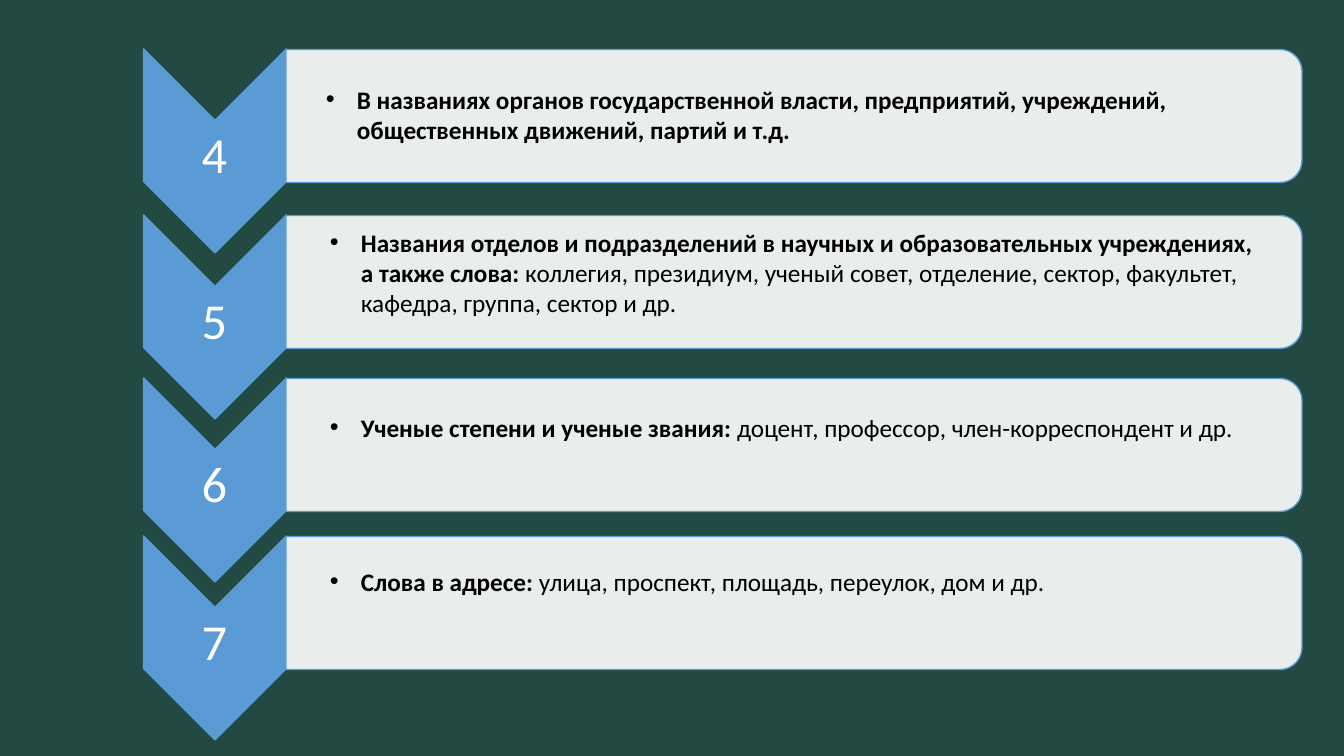
from lxml import etree
from pptx import Presentation
from pptx.dml.color import RGBColor
from pptx.enum.shapes import MSO_SHAPE
from pptx.enum.text import MSO_ANCHOR, MSO_AUTO_SIZE, PP_ALIGN
from pptx.oxml.ns import qn
from pptx.util import Emu, Pt

PX = 914400 / 100.8
BLUE, WHITE, BLACK, GREEN = "5B9BD5", "FFFFFF", "000000", "224A42"
CHEVRON_X, CHEVRON_LENGTH, CHEVRON_WIDTH = 215, 204, 143
PANEL_X, PANEL_LENGTH, PANEL_HEIGHT = 794, 1016, 133
INDENT = 31

# number, row top, text box (left, top, width, height), bold text, plain text
RULES = [
    ("4", 49, (316, 79, 950, 72),
     "В названиях органов государственной власти, предприятий, учреждений, "
     "общественных движений, партий и т.д.", ""),
    ("5", 215, (320, 222, 952, 102),
     "Названия отделов и подразделений в научных и образовательных учреждениях, "
     "а также слова:",
     " коллегия, президиум, ученый совет, отделение, сектор, факультет, "
     "кафедра, группа, сектор и др."),
    ("6", 378, (320, 407, 952, 40),
     "Ученые степени и ученые звания: ",
     "доцент, профессор, член-корреспондент и др."),
    ("7", 536, (320, 561, 901, 40),
     "Слова в адресе: ",
     "улица, проспект, площадь, переулок, дом и др."),
]


def px(*lengths):
    return [Emu(round(length * PX)) for length in lengths]


def add_turned(preset, center_x, center_y, width, height, color):
    """Add a blue-edged shape turned a quarter clockwise about its centre."""
    shape = slide.shapes.add_shape(
        preset, *px(center_x - width / 2, center_y - height / 2, width, height))
    shape.rotation = 90
    shape.shadow.inherit = False
    shape.fill.solid()
    shape.fill.fore_color.rgb = RGBColor.from_string(color)
    shape.line.color.rgb = RGBColor.from_string(BLUE)
    shape.line.width = Pt(1)
    return shape


prs = Presentation()
prs.slide_width, prs.slide_height = px(1344, 756)
slide = prs.slides.add_slide(prs.slide_layouts[6])
slide.background.fill.solid()
slide.background.fill.fore_color.rgb = RGBColor.from_string(GREEN)

for number, top, text_area, bold_text, plain_text in RULES:
    add_turned(MSO_SHAPE.CHEVRON, CHEVRON_X, top + 102,
               CHEVRON_LENGTH, CHEVRON_WIDTH, BLUE)

    panel = add_turned(MSO_SHAPE.ROUND_2_SAME_RECTANGLE, PANEL_X, top + 67,
                       PANEL_HEIGHT, PANEL_LENGTH, WHITE)
    panel_color = panel.fill._xPr.find(qn("a:solidFill"))[0]
    etree.SubElement(panel_color, qn("a:alpha"), val="90000")

    number_frame = slide.shapes.add_textbox(*px(143, top + 78, 143, 61)).text_frame
    number_frame.word_wrap = True
    number_frame.vertical_anchor = MSO_ANCHOR.MIDDLE
    number_frame.margin_left, number_frame.margin_right = px(3, 3)
    number_frame.margin_top, number_frame.margin_bottom = px(3, 3)
    number_line = number_frame.paragraphs[0]
    number_line.text = number
    number_line.alignment = PP_ALIGN.CENTER
    number_line.line_spacing = 0.9
    number_line.font.name = "Calibri"
    number_line.font.size = Pt(36)
    number_line.font.color.rgb = RGBColor.from_string(WHITE)

    rule_frame = slide.shapes.add_textbox(*px(*text_area)).text_frame
    rule_frame.word_wrap = True
    rule_frame.auto_size = MSO_AUTO_SIZE.SHAPE_TO_FIT_TEXT
    rule = rule_frame.paragraphs[0]
    properties = rule._p.get_or_add_pPr()
    indent = px(INDENT)[0]
    properties.set("marL", str(indent))
    properties.set("indent", str(-indent))
    etree.SubElement(properties, qn("a:buFont"), typeface="Arial")
    etree.SubElement(properties, qn("a:buChar"), char="•")
    for text, bold in ((bold_text, True), (plain_text, False)):
        if text:
            run = rule.add_run()
            run.text = text
            run.font.name = "Calibri"
            run.font.size = Pt(18)
            run.font.bold = bold
            run.font.color.rgb = RGBColor.from_string(BLACK)

prs.save("out.pptx")
